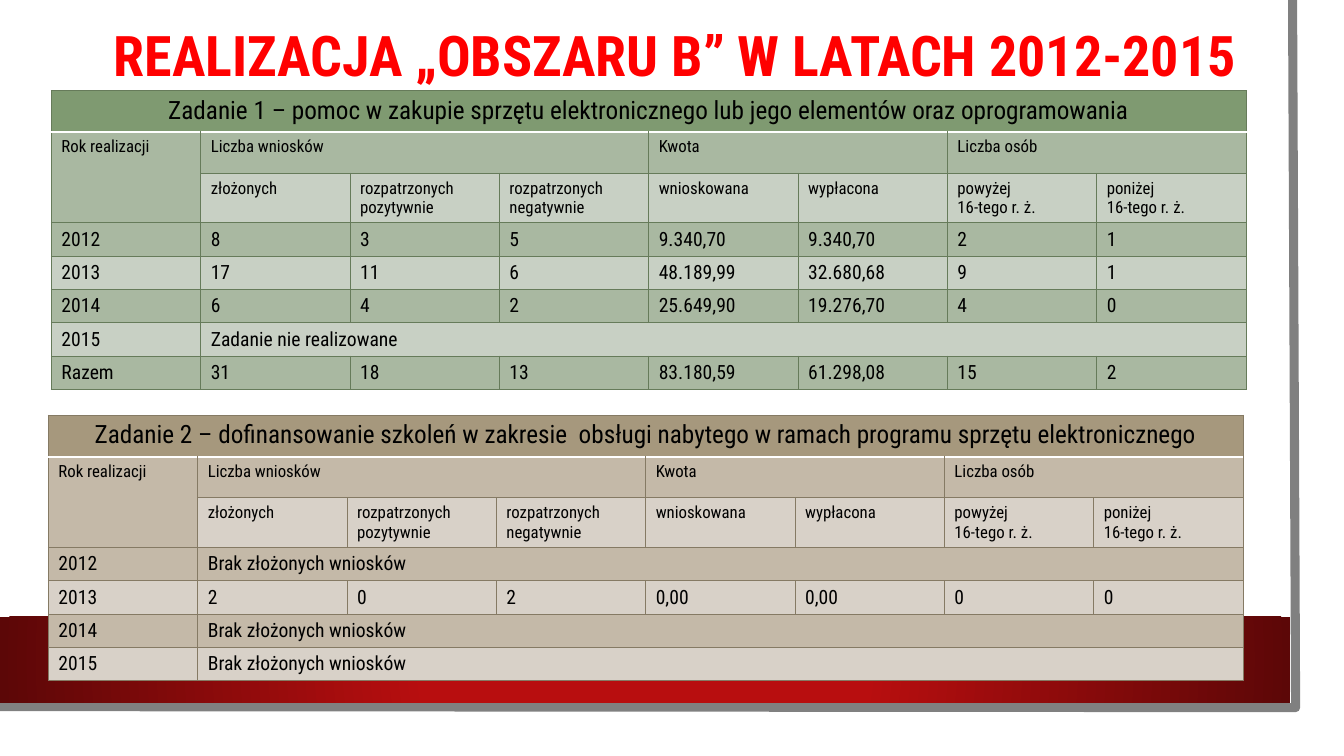
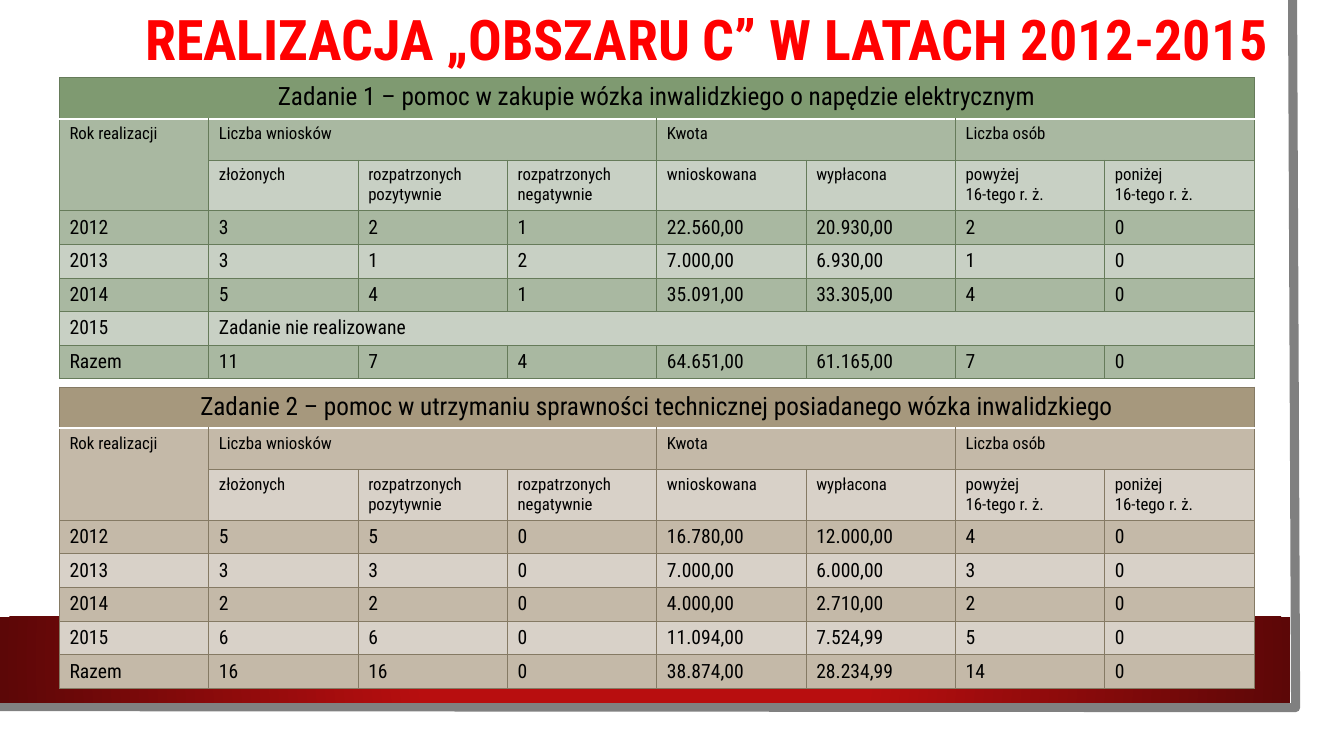
"""Build two slides of yearly application tables for programme areas B and C."""
from pptx import Presentation
from pptx.dml.color import RGBColor
from pptx.enum import shapes, text
from pptx.oxml import parse_xml
from pptx.oxml.ns import nsdecls, qn
from pptx.util import Inches, Pt

FONT = "Roboto Condensed"
WHITE = RGBColor(0xFF, 0xFF, 0xFF)
BLACK = RGBColor(0, 0, 0)
RED = RGBColor(0xFF, 0, 0)
GREY = RGBColor(0x80, 0x80, 0x80)
BAND_MID = RGBColor(0xB8, 0x0E, 0x0F)
BAND_EDGE = RGBColor(0x5C, 0x07, 0x07)
GREEN = dict(head=RGBColor(0x7F, 0x9A, 0x71), dark=RGBColor(0xA9, 0xB8, 0xA1),
             light=RGBColor(0xC8, 0xD0, 0xC4), edge=RGBColor(0x66, 0x7B, 0x5A))
TAN = dict(head=RGBColor(0xA6, 0x98, 0x7D), dark=RGBColor(0xC4, 0xB9, 0xA8),
           light=RGBColor(0xD8, 0xD1, 0xC8), edge=RGBColor(0x85, 0x7A, 0x64))

W, H = Inches(13.33), Inches(7.5)
COLS = 8
COL_W = W // 9
HEAD_ROWS = [0.41, 0.41, 0.49]
YEAR_ROW = 0.33
HEADINGS = [
    ["Rok realizacji", "Liczba wniosków", "", "", "Kwota", "", "Liczba osób", ""],
    ["", "złożonych", "rozpatrzonych pozytywnie", "rozpatrzonych negatywnie",
     "wnioskowana", "wypłacona", "powyżej\n16-tego r. ż.", "poniżej\n16-tego r. ż."],
]
HEAD_MERGES = [(0, 0, 0, 7), (1, 0, 2, 0), (1, 1, 1, 3), (1, 4, 1, 5), (1, 6, 1, 7)]
NOT_RUN = "Zadanie nie realizowane"
NONE_FILED = "Brak złożonych wniosków"

SLIDES = [
    ("REALIZACJA „OBSZARU B” W LATACH 2012-2015", 1.03, 0.15, [
        (0.51, 0.9, GREEN,
         "Zadanie 1 – pomoc w zakupie sprzętu elektronicznego lub jego elementów oraz oprogramowania",
         [["2012", "8", "3", "5", "9.340,70", "9.340,70", "2", "1"],
          ["2013", "17", "11", "6", "48.189,99", "32.680,68", "9", "1"],
          ["2014", "6", "4", "2", "25.649,90", "19.276,70", "4", "0"],
          ["2015", NOT_RUN],
          ["Razem", "31", "18", "13", "83.180,59", "61.298,08", "15", "2"]]),
        (0.48, 4.12, TAN,
         "Zadanie 2 – dofinansowanie szkoleń w zakresie  obsługi nabytego w ramach programu sprzętu elektronicznego",
         [["2012", NONE_FILED],
          ["2013", "2", "0", "2", "0,00", "0,00", "0", "0"],
          ["2014", NONE_FILED],
          ["2015", NONE_FILED]]),
    ]),
    ("REALIZACJA „OBSZARU C” W LATACH 2012-2015", 1.34, 0, [
        (0.59, 0.77, GREEN,
         "Zadanie 1 – pomoc w zakupie wózka inwalidzkiego o napędzie elektrycznym",
         [["2012", "3", "2", "1", "22.560,00", "20.930,00", "2", "0"],
          ["2013", "3", "1", "2", "7.000,00", "6.930,00", "1", "0"],
          ["2014", "5", "4", "1", "35.091,00", "33.305,00", "4", "0"],
          ["2015", NOT_RUN],
          ["Razem", "11", "7", "4", "64.651,00", "61.165,00", "7", "0"]]),
        (0.59, 3.84, TAN,
         "Zadanie 2 – pomoc w utrzymaniu sprawności technicznej posiadanego wózka inwalidzkiego",
         [["2012", "5", "5", "0", "16.780,00", "12.000,00", "4", "0"],
          ["2013", "3", "3", "0", "7.000,00", "6.000,00", "3", "0"],
          ["2014", "2", "2", "0", "4.000,00", "2.710,00", "2", "0"],
          ["2015", "6", "6", "0", "11.094,00", "7.524,99", "5", "0"],
          ["Razem", "16", "16", "0", "38.874,00", "28.234,99", "14", "0"]]),
    ]),
]


def write(tf, content, size=14, color=BLACK, bold=False, align=text.PP_ALIGN.LEFT):
    for i, line in enumerate(content.split("\n")):
        p = tf.add_paragraph() if i else tf.paragraphs[0]
        p.alignment = align
        r = p.add_run()
        r.text = line
        r.font.name, r.font.size, r.font.bold = FONT, Pt(size), bold
        r.font.color.rgb = color


def set_borders(cell, edge, top_white, bottom_white):
    tc_pr = cell._tc.get_or_add_tcPr()
    for i, (side, white) in enumerate(
            [("L", False), ("R", False), ("T", top_white), ("B", bottom_white)]):
        color, width = (WHITE, Pt(1.5)) if white else (edge, Pt(0.75))
        tc_pr.insert(i, parse_xml(
            f'<a:ln{side} {nsdecls("a")} w="{width}"><a:solidFill>'
            f'<a:srgbClr val="{color}"/></a:solidFill></a:ln{side}>'))


prs = Presentation()
prs.slide_width, prs.slide_height = W, H
blank = prs.slide_layouts[6]
slides = [prs.slides.add_slide(blank) for _ in SLIDES]

draft = slides[0].shapes
paper = draft.add_shape(shapes.MSO_SHAPE.RECTANGLE, 0, 0, Inches(13.1), Inches(7.27))
paper.fill.solid()
paper.fill.fore_color.rgb = WHITE
paper.line.fill.background()

builder = draft.build_freeform(Inches(12.82), 0)
builder.add_line_segments([(Inches(12.85), Inches(7.02)), (Inches(-0.03), Inches(7.01))],
                          close=False)
frame = builder.convert_to_shape()
frame.fill.background()
frame.line.color.rgb = GREY
frame.line.width = Pt(6.5)

band = draft.add_shape(shapes.MSO_SHAPE.RECTANGLE, 0, Inches(6.12), Inches(12.8), Inches(0.85))
band.line.fill.background()
band.fill.background()
sp_pr = band.element.spPr
sp_pr.replace(sp_pr.find(qn("a:noFill")), parse_xml(
    f'<a:gradFill {nsdecls("a")} rotWithShape="1"><a:gsLst>'
    f'<a:gs pos="34000"><a:srgbClr val="{BAND_MID}"/></a:gs>'
    f'<a:gs pos="100000"><a:srgbClr val="{BAND_EDGE}"/></a:gs></a:gsLst>'
    '<a:path path="circle"><a:fillToRect l="50000" t="50000" r="50000" b="50000"/></a:path>'
    '</a:gradFill>'))

for i, sp in enumerate([paper, frame, band]):
    sp.shadow.inherit = False
    sp.element.xpath(".//p:cNvPr")[0].set("id", str(20 + i))
    blank.shapes.element.append(sp.element)

for slide, (title, title_x, title_y, tables) in zip(slides, SLIDES):
    for x, y, theme, task, years in tables:
        heights = HEAD_ROWS + [YEAR_ROW] * len(years)
        table = slide.shapes.add_table(len(heights), COLS, Inches(x), Inches(y),
                                       COL_W * COLS, Inches(sum(heights))).table
        table.first_row = table.horz_banding = False
        for column in table.columns:
            column.width = COL_W
        merges = HEAD_MERGES + [(len(HEAD_ROWS) + i, 1, len(HEAD_ROWS) + i, COLS - 1)
                                for i, year in enumerate(years) if len(year) == 2]
        for top, left, bottom, right in merges:
            table.cell(top, left).merge(table.cell(bottom, right))
        for i, row in enumerate([[task]] + HEADINGS + years):
            table.rows[i].height = Inches(heights[i])
            shade = theme["head"] if i == 0 else theme["dark" if i % 2 else "light"]
            size = 18 if i == 0 else 12 if i < len(HEAD_ROWS) else 14
            align = text.PP_ALIGN.LEFT if i else text.PP_ALIGN.CENTER
            for j in range(COLS):
                cell = table.cell(i, j)
                cell.fill.solid()
                cell.fill.fore_color.rgb = shade
                set_borders(cell, theme["edge"], i == 1, i == 0)
                if j < len(row) and row[j]:
                    write(cell.text_frame, row[j], size=size, align=align)

    box = slide.shapes.add_textbox(Inches(title_x), Inches(title_y), Inches(11.45), Inches(0.77))
    box.text_frame.word_wrap = True
    write(box.text_frame, title, size=40, color=RED, bold=True)

prs.save("out.pptx")
